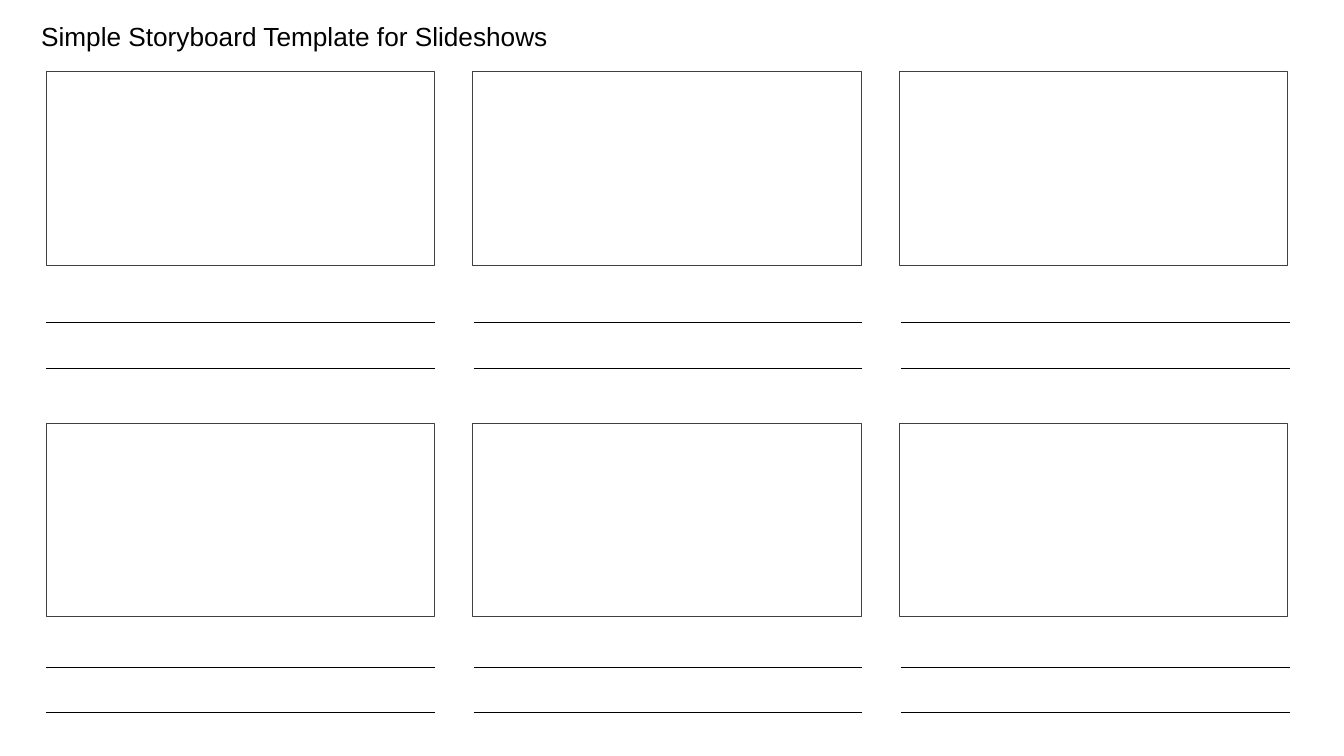
import pptx
import pptx.util
import pptx.dml.color
import pptx.enum.shapes
import pptx.enum.text
from pptx.util import Inches
from lxml import etree

COLORS = {"frame": "404040", "ink": "000000"}
DRAW_NS = "{http://schemas.openxmlformats.org/drawingml/2006/main}"
WIDE, HIGH = 3.85, 1.92
LEFT, STEP = 0.46, 4.23
# Top of each row's frames and the drop to its first note line
ROWS = [(0.71, 2.49), (4.2, 2.42)]
COLS = 3
NOTE_GAP = 0.45


def color(name):
    return pptx.dml.color.RGBColor.from_string(COLORS[name])


def add_title(slide, left, top, width, height):
    box = slide.shapes.add_textbox(
        Inches(left), Inches(top), Inches(width), Inches(height))
    frame = box.text_frame
    frame.word_wrap = True
    frame.vertical_anchor = pptx.enum.text.MSO_ANCHOR.BOTTOM
    run = frame.paragraphs[0].add_run()
    run.text = "Simple Storyboard Template for Slideshows"
    run.font.name = "Arial"
    run.font.size = pptx.util.Pt(18.7)
    run.font.color.rgb = color("ink")


def add_frame(slide, left, top):
    frame = slide.shapes.add_shape(
        pptx.enum.shapes.MSO_SHAPE.RECTANGLE,
        Inches(left), Inches(top), Inches(WIDE), Inches(HIGH))
    frame.shadow.inherit = False
    frame.fill.background()
    frame.line.color.rgb = color("frame")
    frame.line.width = pptx.util.Pt(0.75)


def add_notes(slide, left, top):
    """Rule two lines for writing under a frame."""
    for row in range(2):
        y = Inches(top + row * NOTE_GAP)
        line = slide.shapes.add_connector(
            pptx.enum.shapes.MSO_CONNECTOR.STRAIGHT,
            Inches(left), y, Inches(left + WIDE), y)
        line.line.color.rgb = color("ink")
        line.line.width = pptx.util.Pt(0.5)
        etree.SubElement(line._element.spPr, DRAW_NS + "effectLst")


def main():
    deck = pptx.Presentation()
    deck.slide_width, deck.slide_height = Inches(13.33), Inches(7.5)
    slide = deck.slides.add_slide(deck.slide_layouts[6])
    add_title(slide, 0.31, 0.14, 7.33, 0.42)
    for top, drop in ROWS:
        for col in range(COLS):
            left = LEFT + col * STEP
            add_frame(slide, left, top)
            add_notes(slide, left + col * 0.01, top + drop)
    deck.save("out.pptx")


if __name__ == "__main__":
    main()
